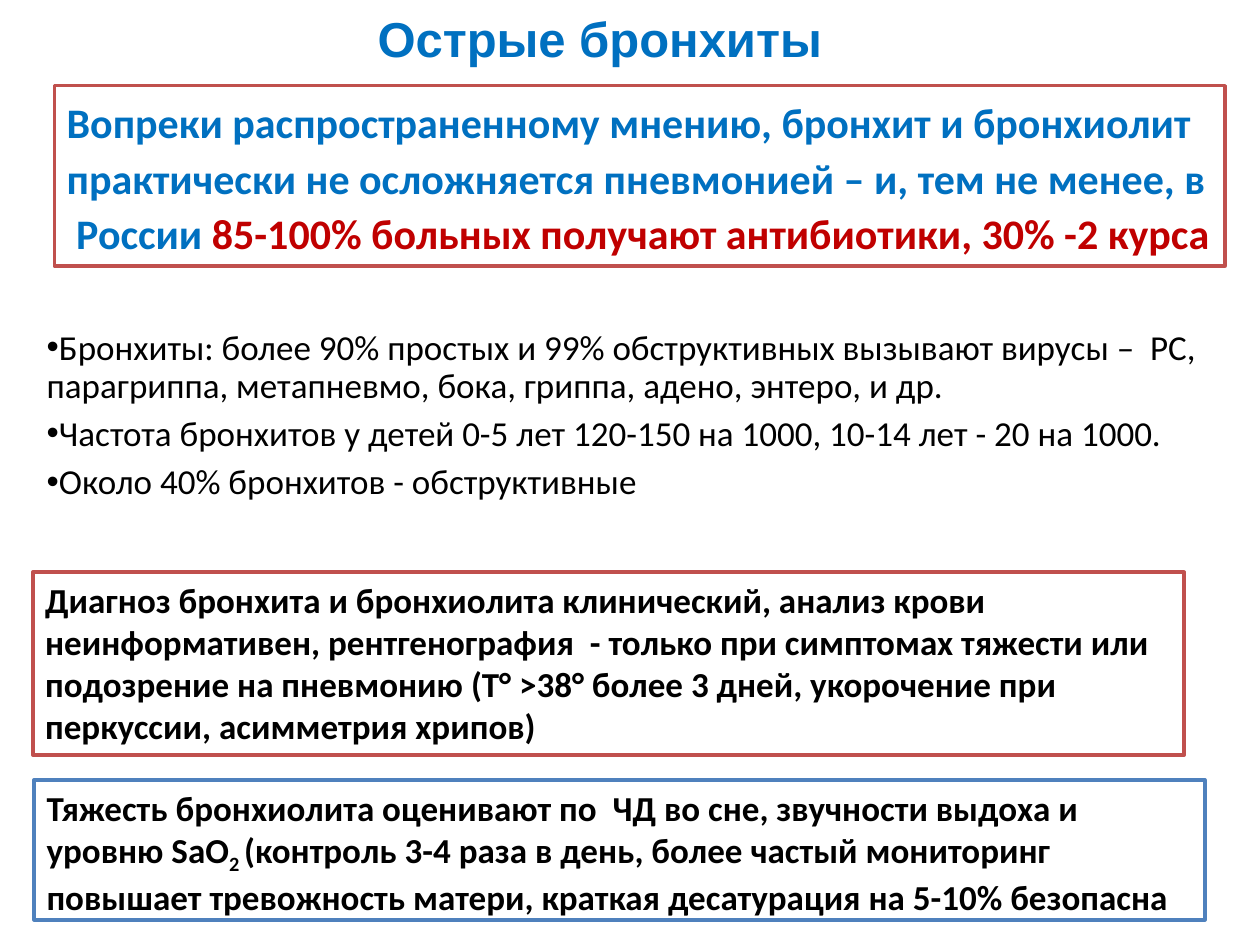
from lxml import etree
from pptx import Presentation
from pptx.dml.color import RGBColor
from pptx.enum.shapes import MSO_SHAPE
from pptx.enum.text import MSO_ANCHOR, MSO_AUTO_SIZE, PP_ALIGN
from pptx.oxml.ns import qn
from pptx.util import Pt

RECT = MSO_SHAPE.RECTANGLE
TOP, MIDDLE = MSO_ANCHOR.TOP, MSO_ANCHOR.MIDDLE
NO_FIT = MSO_AUTO_SIZE.NONE
LEFT, CENTER = PP_ALIGN.LEFT, PP_ALIGN.CENTER

COLORS = {"white": "FFFFFF", "black": "000000", "blue": "0070C0",
          "red": "C00000", "red_line": "C0504D", "blue_line": "4F81BD"}

TITLE = {"name": "Arial", "size": Pt(28), "bold": True}
BODY = {"name": "Calibri", "size": Pt(20), "bold": False}
NOTE = {"name": "Calibri", "size": Pt(20), "bold": True}
LEAD = {"name": "Calibri", "size": Pt(24), "bold": True}

FACTS = [
    "Бронхиты: более 90% простых и 99% обструктивных вызывают вирусы –  РС, "
    "парагриппа, метапневмо, бока, гриппа, адено, энтеро, и др.",
    "Частота бронхитов у детей 0-5 лет 120-150 на 1000, 10-14 лет - 20 на 1000.",
    "Около 40% бронхитов - обструктивные",
]
SEVERITY = [
    ("Тяжесть бронхиолита оценивают по  ЧД во сне, звучности выдоха и уровню SaO", "black", 0),
    ("2 ", "black", -25),
    ("(контроль 3-4 раза в день, более частый мониторинг повышает тревожность "
     "матери, краткая десатурация на 5-10% безопасна", "black", 0),
]
DIAGNOSIS = [
    ("Диагноз бронхита и бронхиолита клинический, анализ крови неинформативен, "
     "рентгенография  - только при симптомах тяжести или подозрение на пневмонию "
     "(Т° >38° более 3 дней, укорочение при  перкуссии, асимметрия хрипов)", "black", 0),
]
ANTIBIOTICS = [
    ("Вопреки распространенному мнению, бронхит и бронхиолит практически не "
     "осложняется пневмонией – и, тем не менее, в  России ", "blue", 0),
    ("85-100% больных получают антибиотики, 30% -2 курса", "red", 0),
]


def rgb(name):
    return RGBColor.from_string(COLORS[name])


def apply(target, values):
    for key, value in values.items():
        setattr(target, key, value)


def place(sp, box):
    for key, value in zip(("left", "top", "width", "height"), box):
        setattr(sp, key, Pt(value))


def add_run(p, text, font, color, baseline=0):
    """Add a run; baseline is a percentage, negative for a subscript."""
    r = p.add_run()
    r.text = text
    apply(r.font, font)
    r.font.color.rgb = rgb(color)
    if baseline:
        r.font._element.set("baseline", str(baseline * 1000))


def set_bullet(p, char="•"):
    pPr = p._p.get_or_add_pPr()
    pPr.set("marL", "0")
    pPr.set("indent", "0")
    etree.SubElement(pPr, qn("a:buChar")).set("char", char)


def fill_title(sp, box, text):
    place(sp, box)
    tf = sp.text_frame
    apply(tf, {"vertical_anchor": MIDDLE, "auto_size": NO_FIT})
    p = tf.paragraphs[0]
    p.alignment = CENTER
    add_run(p, text, TITLE, "blue")


def fill_list(sp, box, items):
    place(sp, box)
    tf = sp.text_frame
    apply(tf, {"vertical_anchor": TOP, "auto_size": NO_FIT})
    for i, item in enumerate(items):
        p = tf.add_paragraph() if i else tf.paragraphs[0]
        apply(p, {"line_spacing": 0.9, "space_before": Pt(6)})
        set_bullet(p)
        add_run(p, item, BODY, "black")


def add_framed_text(s, box, line, runs, font, spacing):
    sp = s.shapes.add_shape(RECT, *map(Pt, box))
    sp.shadow.inherit = False
    sp.fill.solid()
    sp.fill.fore_color.rgb = rgb("white")
    sp.line.color.rgb = rgb(line)
    sp.line.width = Pt(2)
    tf = sp.text_frame
    apply(tf, {"word_wrap": True, "vertical_anchor": TOP, "auto_size": NO_FIT})
    p = tf.paragraphs[0]
    apply(p, {"alignment": LEFT, **spacing})
    for text, color, baseline in runs:
        add_run(p, text, font, color, baseline)


def main():
    prs = Presentation()
    prs.slide_width, prs.slide_height = Pt(720), Pt(540)
    s = prs.slides.add_slide(prs.slide_layouts[1])
    fill_title(s.shapes.title, (18.7, 0, 648, 43.2), "Острые бронхиты")
    fill_list(s.placeholders[1], (19.5, 185, 680.5, 119), FACTS)
    add_framed_text(s, (19.5, 445.7, 669, 80), "blue_line", SEVERITY, NOTE, {})
    add_framed_text(s, (18.7, 327, 658, 104.4), "red_line", DIAGNOSIS, NOTE, {})
    add_framed_text(s, (31, 49, 669, 103), "red_line", ANTIBIOTICS, LEAD,
                    {"line_spacing": 1.1, "space_before": Pt(6)})
    prs.save("out.pptx")


if __name__ == "__main__":
    main()
